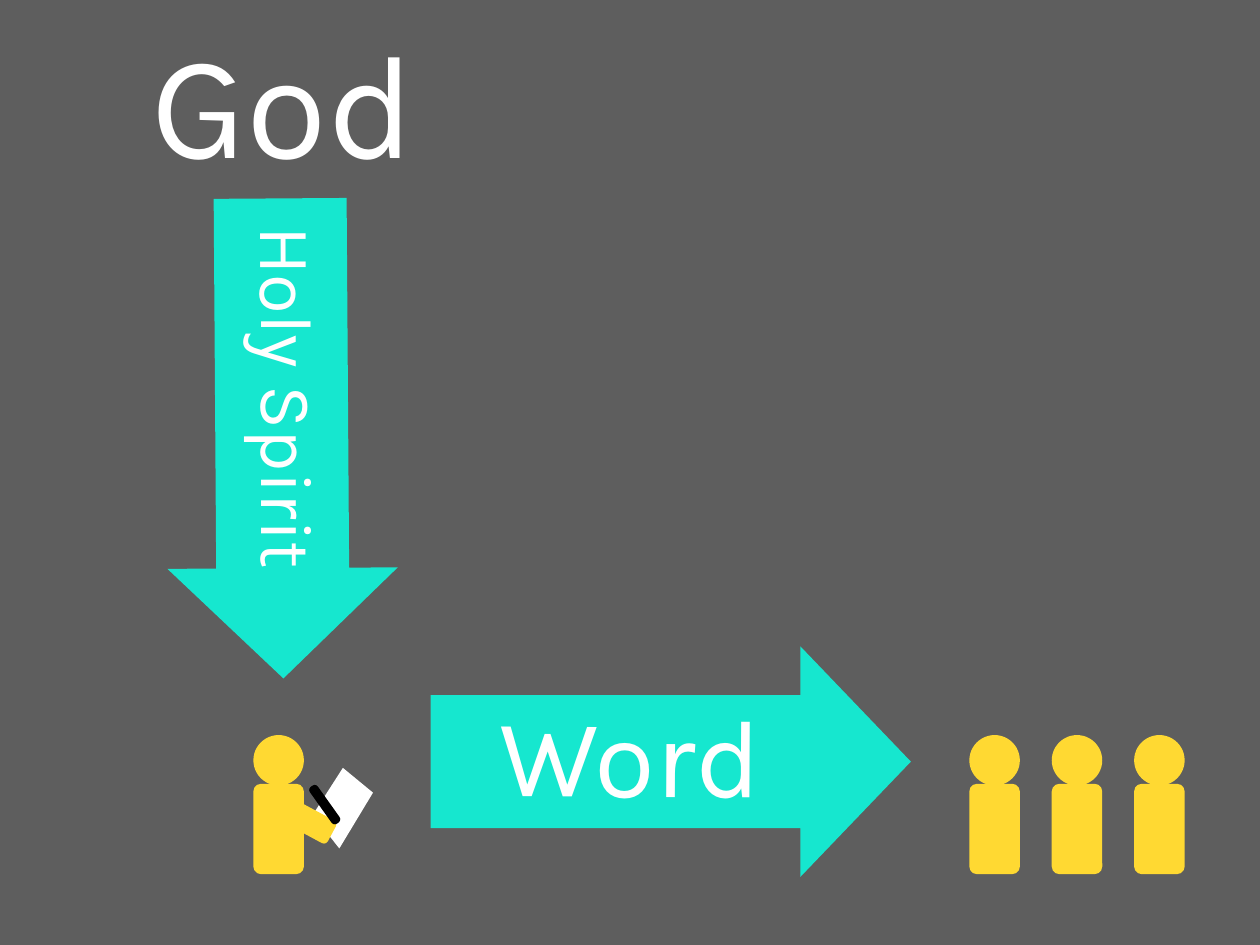
from pptx import Presentation
from pptx.dml.color import RGBColor
from pptx.enum.shapes import MSO_SHAPE
from pptx.enum.text import MSO_ANCHOR, MSO_AUTO_SIZE, PP_ALIGN
from pptx.util import Inches, Pt

GREY, TEAL, YELLOW, WHITE, BLACK = "5E5E5E", "16E7CF", "FFD932", "FFFFFF", "000000"
PERSON_TOP = 8.3
READER_LEFT = 2.86
AUDIENCE_LEFT, AUDIENCE_STEP, AUDIENCE_SIZE = 10.94, 0.93, 3
LABEL_WIDTH = 6.91


def paint(fill, colour):
    fill.solid()
    fill.fore_color.rgb = RGBColor.from_string(colour)


def finish(shape, colour):
    shape.shadow.inherit = False
    paint(shape.fill, colour)
    shape.line.fill.background()


def add_block(group, kind, left, top, width, height, colour, adjustments=(), rotation=0):
    shape = group.shapes.add_shape(kind, Inches(left), Inches(top), Inches(width), Inches(height))
    for index, value in enumerate(adjustments):
        shape.adjustments[index] = value
    shape.rotation = rotation
    finish(shape, colour)


def add_label(parent, text, left, top, height, size, rotation=0):
    box = parent.shapes.add_textbox(Inches(left), Inches(top), Inches(LABEL_WIDTH), Inches(height))
    box.rotation = rotation
    frame = box.text_frame
    frame.word_wrap = True
    frame.auto_size = MSO_AUTO_SIZE.SHAPE_TO_FIT_TEXT
    frame.vertical_anchor = MSO_ANCHOR.MIDDLE
    frame.margin_left = frame.margin_right = Inches(0.06)
    frame.margin_top = frame.margin_bottom = Inches(0.06)
    para = frame.paragraphs[0]
    para.text = text
    para.alignment = PP_ALIGN.CENTER
    para.font.name = "Karla"
    para.font.size = Pt(size)
    para.font.color.rgb = RGBColor.from_string(WHITE)


def add_arrow(page, left, top, rotation=0):
    group = page.shapes.add_group_shape()
    add_block(group, MSO_SHAPE.RIGHT_ARROW, left, top, 5.42, 2.6, TEAL, (0.577, 0.479), rotation)
    return group


def add_person(page, left):
    group = page.shapes.add_group_shape()
    add_block(group, MSO_SHAPE.OVAL, left, PERSON_TOP, 0.57, 0.57, YELLOW)
    add_block(group, MSO_SHAPE.ROUNDED_RECTANGLE, left, PERSON_TOP + 0.55, 0.57, 1.02, YELLOW, (0.15,))
    return group


def add_writing_tools(person):
    corners = [(3.87, 8.67), (3.53, 9.2), (3.83, 9.58), (4.21, 8.95)]
    points = [(Inches(x), Inches(y)) for x, y in corners]
    outline = person.shapes.build_freeform(*points[0])
    outline.add_line_segments(points[1:], close=True)
    finish(outline.convert_to_shape(), WHITE)
    add_block(person, MSO_SHAPE.ROUNDED_RECTANGLE, 3.34, 8.98, 0.29, 0.59, YELLOW, (0.171,), 298.3)
    add_block(person, MSO_SHAPE.ROUNDED_RECTANGLE, 3.61, 8.83, 0.11, 0.51, BLACK, (0.394,), 324.6)


def main():
    deck = Presentation()
    deck.slide_width, deck.slide_height = Inches(14.22), Inches(10.67)
    page = deck.slides.add_slide(deck.slide_layouts[6])
    paint(page.background.fill, GREY)

    add_label(page, "God", -0.26, -0.07, 2.38, 120)
    spirit = add_arrow(page, 0.47, 3.65, 89.6)
    add_label(spirit, "Holy Spirit", -0.18, 3.88, 1.22, 59, 89.9)
    add_writing_tools(add_person(page, READER_LEFT))
    for index in range(AUDIENCE_SIZE):
        add_person(page, AUDIENCE_LEFT + index * AUDIENCE_STEP)
    word = add_arrow(page, 4.86, 7.3)
    add_label(word, "Word", 3.66, 7.6, 1.81, 90, 0.3)

    deck.save("out.pptx")


if __name__ == "__main__":
    main()
